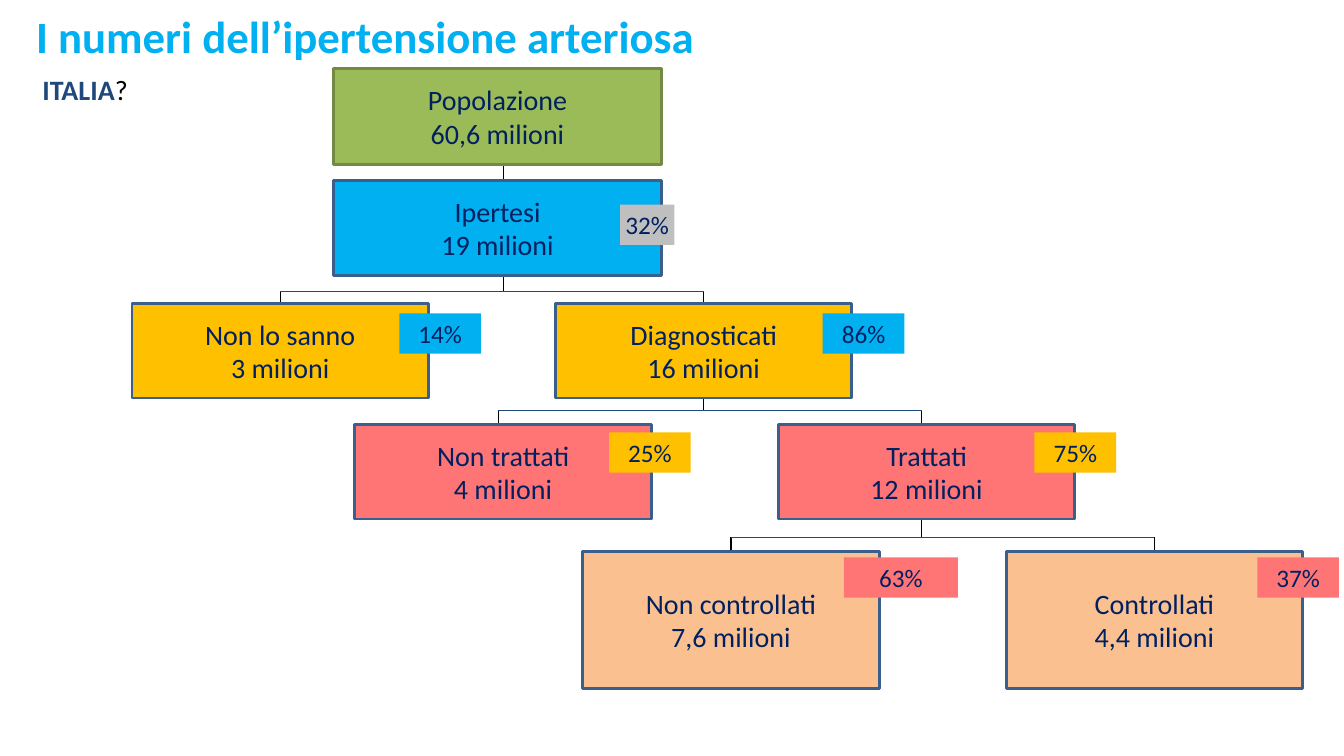
"""Build the decision-tree slide on arterial hypertension in Italy."""
from dataclasses import dataclass

from lxml import etree
from pptx import Presentation, util as u
from pptx.dml.color import RGBColor
from pptx.enum import shapes as sh, text as t
from pptx.oxml.ns import qn

CELL = 0.1
SIBLING_PITCH = 42
GROUP_WIDTH = 29.4
TOTAL_LEFT, TOTAL_WIDTH = 33.1, 32.5
BADGE_HEIGHT = 4
DROP = 4.7
NAVY, BLUE, BLACK, EDGE = "002060", "1F497D", "000000", "3A5F8C"
CYAN, AMBER, CORAL, PEACH = "00B0F0", "FFC000", "FF7575", "FAC090"


@dataclass(frozen=True)
class Badge:
    """Percentage label placed on the grid."""
    percent: str
    column: float
    row: float
    width: float
    fill: str
    wrap: bool = True


@dataclass(frozen=True)
class Group:
    """Population group with its head count."""
    label: str
    column: float
    row: float
    width: float
    height: float
    fill: str
    edge: str = EDGE


@dataclass(frozen=True)
class Split:
    """Tier that divides a group into two, with its branch lines."""
    labels: tuple[str, str]
    column: float
    row: float
    height: float
    fill: str
    joint: float
    bar_row: float


TOTALS = (
    Group("Popolazione\n60,6 milioni", TOTAL_LEFT, 6.8, TOTAL_WIDTH, 9.5, "9BBB59", "738A42"),
    Group("Ipertesi\n19 milioni", TOTAL_LEFT, 17.9, TOTAL_WIDTH, 9.4, CYAN),
)
SPLITS = (
    Split(("Non lo sanno\n3 milioni", "Diagnosticati\n16 milioni"),
          13.1, 30.1, 9.4, AMBER, 27.8, 28.9),
    Split(("Non trattati\n4 milioni", "Trattati\n12 milioni"),
          35.2, 42.1, 9.4, CORAL, 49.4, 40.7),
    Split(("Non controllati\n7,6 milioni", "Controllati\n4,4 milioni"),
          57.8, 54.7, 13.6, PEACH, 72.5, 53.3),
)
BADGES = (
    Badge("32%", 61.5, 20.3, 5.4, "BFBFBF", False),
    Badge("14%", 39.6, 31.1, 8.1, CYAN),
    Badge("86%", 81.6, 31.1, 8.1, CYAN),
    Badge("25%", 60.4, 42.9, 8.1, AMBER),
    Badge("75%", 102.6, 42.9, 8.1, AMBER),
    Badge("63%", 83.7, 55.3, 11.3, CORAL),
    Badge("37%", 124.7, 55.3, 8.1, CORAL),
)


def grid(*cells: float) -> list[u.Length]:
    """Convert grid cells to slide lengths."""
    return [u.Inches(cell * CELL) for cell in cells]


def color(value: str) -> RGBColor:
    """Turn a hex string into a colour."""
    return RGBColor.from_string(value)


def style_font(font, size: float, tint: str, bold: bool = False) -> None:
    """Set the typeface, size, colour and weight."""
    font.name, font.size, font.bold = "Calibri", u.Pt(size), bold
    font.color.rgb = color(tint)


def draw_line(slide, start: tuple[float, float], end: tuple[float, float],
              tint: str = BLACK, weight: float = 0.75) -> None:
    """Draw one straight branch line."""
    branch = slide.shapes.add_connector(sh.MSO_CONNECTOR.STRAIGHT, *grid(*start, *end))
    branch.line.color.rgb = color(tint)
    branch.line.width = u.Pt(weight)
    etree.SubElement(branch._element.spPr, qn("a:effectLst"))


def draw_box(slide, place: list[u.Length], label: str, fill: str, size: float):
    """Draw a filled rectangle with centred text."""
    box = slide.shapes.add_shape(sh.MSO_SHAPE.RECTANGLE, *place)
    box.shadow.inherit = False
    box.fill.solid()
    box.fill.fore_color.rgb = color(fill)
    box.line.fill.background()
    frame = box.text_frame
    frame.text = label
    frame.vertical_anchor = t.MSO_ANCHOR.MIDDLE
    for paragraph in frame.paragraphs:
        paragraph.alignment = t.PP_ALIGN.CENTER
        for run in paragraph.runs:
            style_font(run.font, size, NAVY)
    return box


def draw_group(slide, group: Group) -> None:
    """Draw an outlined population group."""
    place = grid(group.column, group.row, group.width, group.height)
    box = draw_box(slide, place, group.label, group.fill, 20)
    box.line.color.rgb = color(group.edge)
    box.line.width = u.Pt(2)


def draw_badge(slide, badge: Badge) -> None:
    """Draw a percentage label."""
    place = grid(badge.column, badge.row, badge.width, BADGE_HEIGHT)
    frame = draw_box(slide, place, badge.percent, badge.fill, 18).text_frame
    frame.word_wrap = badge.wrap
    frame.margin_left = frame.margin_right = u.Inches(0.05)
    frame.margin_top = frame.margin_bottom = u.Inches(0.05)


def draw_branches(slide) -> None:
    """Draw the trunk, bars and drops joining the tiers."""
    draw_line(slide, (49.9, 11.6), (49.9, SPLITS[0].bar_row))
    following_bars = [split.bar_row for split in SPLITS[1:]]
    right_ends = following_bars + [SPLITS[-1].bar_row + DROP]
    for split, right_end in zip(SPLITS, right_ends):
        left, right, bar = split.joint, split.joint + SIBLING_PITCH, split.bar_row
        draw_line(slide, (left, bar), (left, bar + DROP))
        draw_line(slide, (right, bar), (right, right_end))
        draw_line(slide, (left, bar), (right, bar), BLUE, 1)


def draw_heading(slide, place: list[u.Length], parts: tuple[tuple[str, str, bool], ...],
                 size: float):
    """Write a one-line heading from coloured parts."""
    frame = slide.shapes.add_textbox(*place).text_frame
    frame.word_wrap = True
    for wording, tint, bold in parts:
        run = frame.paragraphs[0].add_run()
        run.text = wording
        style_font(run.font, size, tint, bold)
    return frame


def main() -> None:
    """Assemble and save the slide."""
    deck = Presentation()
    deck.slide_width, deck.slide_height = u.Inches(13.33), u.Inches(7.5)
    slide = deck.slides.add_slide(deck.slide_layouts[6])
    draw_heading(slide, grid(2.6, 0.4, 126, 6.4),
                 (("I numeri dell’ipertensione arteriosa", CYAN, True),), 32)
    country = draw_heading(slide, grid(2.6, 6.7, 128.1, 4.4),
                           (("ITALIA", BLUE, True), ("?", BLACK, False)), 20)
    country.margin_left = u.Inches(0.16)
    country.paragraphs[0].alignment = t.PP_ALIGN.JUSTIFY
    draw_branches(slide)
    for total in TOTALS:
        draw_group(slide, total)
    for split in SPLITS:
        for index, label in enumerate(split.labels):
            column = split.column + index * SIBLING_PITCH
            draw_group(slide, Group(label, column, split.row, GROUP_WIDTH,
                                    split.height, split.fill))
    for badge in BADGES:
        draw_badge(slide, badge)
    deck.save("out.pptx")


if __name__ == "__main__":
    main()
